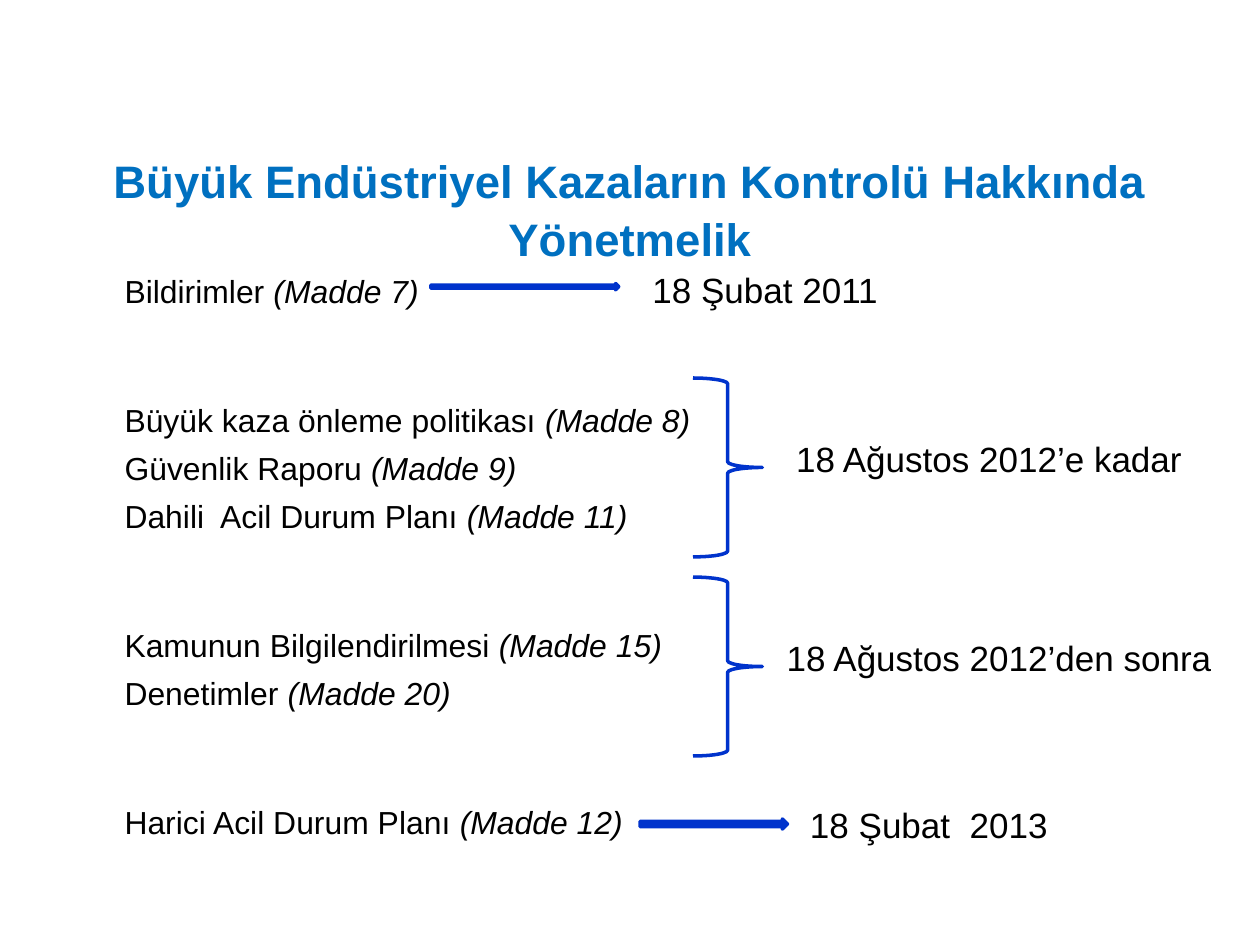
from pptx import Presentation
from pptx import util as u
from pptx.dml.color import RGBColor
from pptx.enum import shapes, text

COLORS = {"title": "0070C0", "accent": "0033CC", "text": "000000"}
FONT = "Arial"

# Each group holds (duty, article) lines that share one deadline
DUTY_GROUPS = [
    [("Bildirimler", "(Madde 7)")],
    [("Büyük kaza önleme politikası", "(Madde 8)"),
     ("Güvenlik Raporu", "(Madde 9)"),
     ("Dahili  Acil Durum Planı", "(Madde 11)")],
    [("Kamunun Bilgilendirilmesi", "(Madde 15)"),
     ("Denetimler", "(Madde 20)")],
    [("Harici Acil Durum Planı", "(Madde 12)")],
]

ARROW = shapes.MSO_SHAPE.RIGHT_ARROW
BRACE = shapes.MSO_SHAPE.RIGHT_BRACE
LEFT, CENTER = text.PP_ALIGN.LEFT, text.PP_ALIGN.CENTER

# Marker, marker box, deadline, deadline box, alignment
DEADLINES = [
    (ARROW, (3.42, 2.25, 1.49, 0.05), "18 Şubat 2011", (5.08, 2.08, 3.2, 0.44), LEFT),
    (BRACE, (5.5, 3, 0.55, 1.42), "18 Ağustos 2012’e kadar", (6.17, 3.42, 3.36, 0.44), CENTER),
    (BRACE, (5.5, 4.58, 0.55, 1.42), "18 Ağustos 2012’den sonra", (6.08, 5, 3.7, 0.44), CENTER),
    (ARROW, (5.08, 6.5, 1.17, 0.08), "18 Şubat  2013", (6.33, 6.33, 3.31, 0.44), LEFT),
]


def inches(box):
    return [u.Inches(length) for length in box]


def set_font(paragraph, size, color="text", bold=False):
    font = paragraph.font
    font.name, font.size, font.bold = FONT, u.Pt(size), bold
    font.color.rgb = RGBColor.from_string(COLORS[color])


def add_text_frame(slide, box):
    frame = slide.shapes.add_textbox(*inches(box)).text_frame
    frame.word_wrap = True
    return frame


def add_title(slide, box):
    frame = add_text_frame(slide, box)
    frame.vertical_anchor = text.MSO_ANCHOR.MIDDLE
    paragraph = frame.paragraphs[0]
    paragraph.text = "Büyük Endüstriyel Kazaların Kontrolü Hakkında Yönetmelik"
    paragraph.alignment = CENTER
    paragraph.line_spacing = 1.05
    set_font(paragraph, 26, "title", bold=True)


def add_duties(slide, box):
    frame = add_text_frame(slide, box)
    for group_index, group in enumerate(DUTY_GROUPS):
        for line_index, (duty, article) in enumerate(group):
            if group_index == line_index == 0:
                paragraph = frame.paragraphs[0]
            else:
                paragraph = frame.add_paragraph()
                # A new group stands further from the one above
                paragraph.space_before = u.Pt(4.4 if line_index else 51)
            paragraph.line_spacing = 1.05
            set_font(paragraph, 18.2)
            paragraph.add_run().text = duty + " "
            article_run = paragraph.add_run()
            article_run.text = article
            article_run.font.italic = True


def add_marker(slide, kind, box):
    shape = slide.shapes.add_shape(kind, *inches(box))
    shape.shadow.inherit = False
    accent = RGBColor.from_string(COLORS["accent"])
    shape.line.color.rgb = accent
    shape.line.width = u.Pt(2)
    if kind == ARROW:
        shape.fill.solid()
        shape.fill.fore_color.rgb = accent
    else:
        shape.fill.background()


def add_deadline(slide, wording, box, alignment):
    paragraph = add_text_frame(slide, box).paragraphs[0]
    paragraph.text = wording
    paragraph.alignment = alignment
    set_font(paragraph, 20)


def main():
    presentation = Presentation()
    presentation.slide_width, presentation.slide_height = inches((10, 7.5))
    slide = presentation.slides.add_slide(presentation.slide_layouts[6])

    add_title(slide, (0.5, 1.15, 9, 1))
    add_duties(slide, (0.89, 2.09, 8.46, 5))
    for kind, marker_box, wording, text_box, alignment in DEADLINES:
        add_marker(slide, kind, marker_box)
        add_deadline(slide, wording, text_box, alignment)

    presentation.save("out.pptx")


if __name__ == "__main__":
    main()
